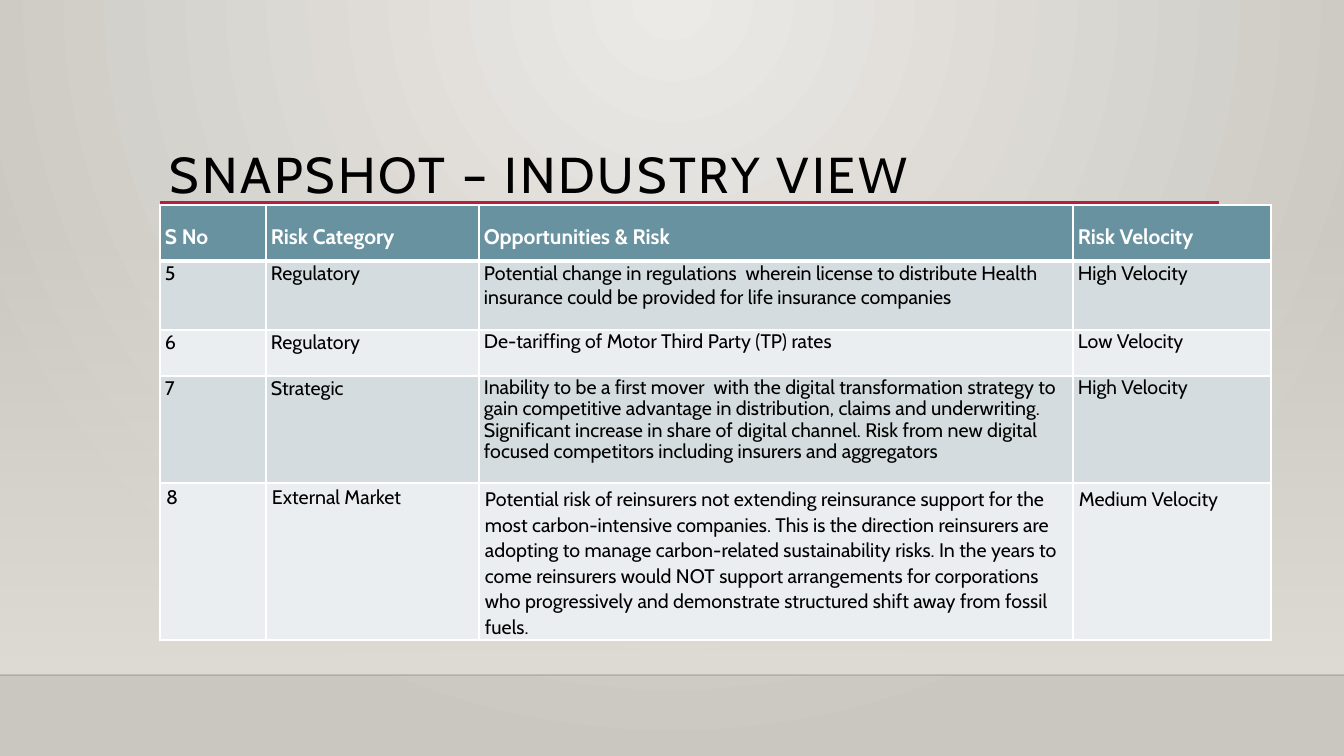
import pptx
import pptx.util
import pptx.dml.color
import pptx.enum.shapes
import pptx.enum.text
import pptx.oxml.ns
import lxml.etree

RGB = pptx.dml.color.RGBColor
BLACK = RGB(0x00, 0x00, 0x00)
WHITE = RGB(0xFF, 0xFF, 0xFF)
RED = RGB(0xB7, 0x1E, 0x42)
TEAL = RGB(0x68, 0x92, 0xA0)
DARK = RGB(0xD4, 0xDC, 0xDF)
LIGHT = RGB(0xEB, 0xEE, 0xF0)
SAND = RGB(0xDF, 0xDB, 0xD5)
PALE = RGB(0xEC, 0xEA, 0xE7)
STONE = RGB(0xCA, 0xC7, 0xC1)
EDGE = RGB(0x00, 0x00, 0x01)

Pt = pptx.util.Pt
qn = pptx.oxml.ns.qn
ANCHOR = pptx.enum.text.MSO_ANCHOR
SCALE = 914400 / 100.8


def px(n):
    return pptx.util.Emu(round(n * SCALE))


def add(node, tag, **attrs):
    return lxml.etree.SubElement(node, qn(tag), attrs)


deck = pptx.Presentation()
deck.slide_width, deck.slide_height = px(1344), px(756)
slide = deck.slides.add_slide(deck.slide_layouts[6])

# Background: radial glow from the top centre
fill = slide.background.fill
fill.gradient()
for stop, tone in zip(fill.gradient_stops, (PALE, STONE)):
    stop.color.rgb = tone
grad = slide.element.find(".//" + qn("a:gradFill"))
grad.remove(grad.find(qn("a:lin")))
glow = add(grad, "a:path", path="circle")
add(glow, "a:fillToRect", l="43000", t="0", r="43000", b="100000")

# Wall that fades in towards the floor
wall = slide.shapes.add_shape(pptx.enum.shapes.MSO_SHAPE.RECTANGLE,
                              px(0), px(223), px(1344), px(452))
wall.shadow.inherit = False
wall.line.fill.background()
wall.fill.gradient()
wall.fill.gradient_angle = 270
for stop in wall.fill.gradient_stops:
    stop.color.rgb = SAND
add(wall.element.find(".//" + qn("a:srgbClr")), "a:alpha", val="0")

# Floor edge and title rule
for left, right, top, tone, width, alpha in (
        (0, 1344, 675, EDGE, 1, "20000"),
        (160, 1219, 203, RED, 2.5, "100000")):
    rule = slide.shapes.add_connector(pptx.enum.shapes.MSO_CONNECTOR.STRAIGHT,
                                      px(left), px(top), px(right), px(top))
    rule.line.color.rgb = tone
    rule.line.width = Pt(width)
    add(rule.element.find(".//" + qn("a:srgbClr")), "a:alpha", val=alpha)
    add(rule.element.spPr, "a:effectLst")

# Title
title = slide.shapes.add_textbox(px(160), px(89), px(1058), px(115))
frame = title.text_frame
for key, val in {"word_wrap": True, "vertical_anchor": ANCHOR.BOTTOM,
                 "margin_left": px(10), "margin_right": px(10),
                 "margin_top": px(5), "margin_bottom": 0}.items():
    setattr(frame, key, val)
para = frame.paragraphs[0]
para.line_spacing = 0.9
run = para.add_run()
run.text = "SNAPSHOT – INDUSTRY VIEW"
run.font.name, run.font.size = "Cabin", Pt(36)
run.font.color.rgb = BLACK
run.font._element.set("spc", "200")

# Table: row height, line spacing of the two right columns, cell texts
rows = (
    (56, 1, ("S No", "Risk Category", "Opportunities & Risk", "Risk Velocity")),
    (69, 1, ("5", "Regulatory",
             "Potential change in regulations  wherein license to distribute "
             "Health insurance could be provided for life insurance companies",
             "High Velocity")),
    (46, 0.9, ("6", "Regulatory",
               "De-tariffing of Motor Third Party (TP) rates", "Low Velocity")),
    (107, 0.9, ("7", "Strategic",
                "Inability to be a first mover  with the digital transformation "
                "strategy to gain competitive advantage in distribution, claims "
                "and underwriting. Significant increase in share of digital "
                "channel. Risk from new digital focused competitors including "
                "insurers and aggregators", "High Velocity")),
    (154, 1.07, ("8", "External Market",
                 "Potential risk of reinsurers not extending reinsurance support "
                 "for the most carbon-intensive companies. This is the direction "
                 "reinsurers are adopting to manage carbon-related sustainability "
                 "risks. In the years to come reinsurers would NOT support "
                 "arrangements for corporations who progressively and demonstrate "
                 "structured shift away from fossil fuels.", "Medium Velocity")),
)
cols = (106, 213, 594, 198)
high = sum(row[0] for row in rows)
table = slide.shapes.add_table(len(rows), len(cols), px(160), px(205),
                               px(sum(cols)), px(high)).table
for col, width in zip(table.columns, cols):
    col.width = px(width)

for r, (height, space, texts) in enumerate(rows):
    table.rows[r].height = px(height)
    head = r == 0
    last = r == len(rows) - 1
    pads = (6, 3, 6, 3) if last else (5, 1, 7, 11)
    for c, text in enumerate(texts):
        cell = table.cell(r, c)
        cell.vertical_anchor = ANCHOR.BOTTOM if head else ANCHOR.TOP
        for side, pad in zip(("left", "top", "right", "bottom"), pads):
            setattr(cell, "margin_" + side, px(pad))

        # White grid, thicker under the header
        props = cell._tc.get_or_add_tcPr()
        for side in "LRTB":
            thick = (head and side == "B") or (r == 1 and side == "T")
            line = add(props, "a:ln" + side, w=str(Pt(3 if thick else 1)))
            add(add(line, "a:solidFill"), "a:srgbClr", val=str(WHITE))
        cell.fill.solid()
        cell.fill.fore_color.rgb = TEAL if head else DARK if r % 2 else LIGHT

        para = cell.text_frame.paragraphs[0]
        para.line_spacing = space if c > 1 else 1.0
        run = para.add_run()
        run.text = text
        for key, val in {"name": "Cabin", "size": Pt(15 if head else 14),
                         "bold": head}.items():
            setattr(run.font, key, val)
        run.font.color.rgb = WHITE if head else BLACK

deck.save("out.pptx")
